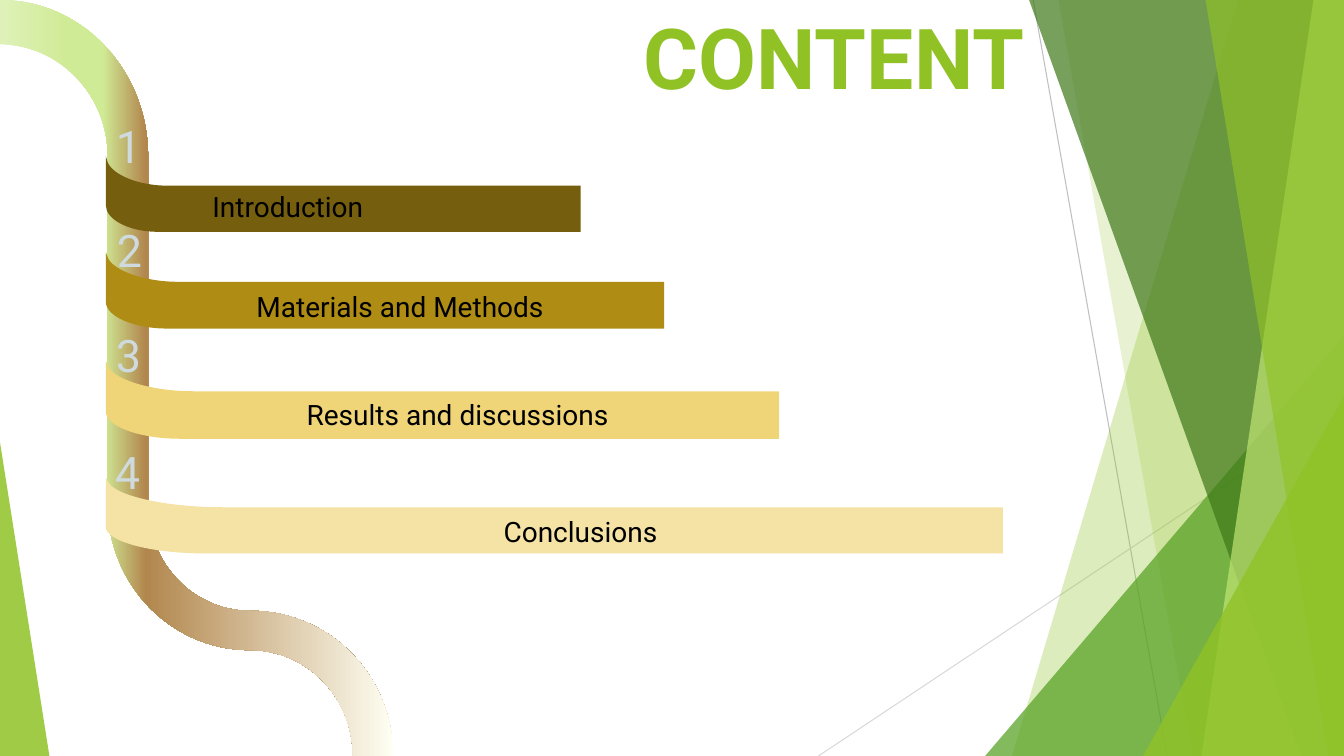
from lxml.etree import SubElement
from pptx import Presentation
from pptx.dml.color import RGBColor
from pptx.enum.shapes import MSO_CONNECTOR, MSO_SHAPE
from pptx.enum.text import PP_ALIGN
from pptx.oxml.ns import qn
from pptx.util import Pt

FONT = "Roboto"
GREEN = "90C226"
PIPE_STOPS = [(0, "DFF1B9"), (17, "D0EB96"), (26, "D0EB96"), (37, "B2874E"), (100, "FEFEF2")]
SECTIONS = [
    ("Introduction", "755E0D", (75.6, 111.6, 339.1, 54), (0, -30.2), (-5, 20.2, 270)),
    ("Materials and Methods", "AF8C14", (75.6, 180, 398.9, 54.7), (0.7, -24.5), (21.6, 23, 377.3)),
    ("Results and discussions", "F0D578", (75.6, 257.8, 481, 55.6), (0, -27.4), (21.6, 22.3, 459.4)),
    ("Conclusions", "F5E3A5", (75.6, 341.3, 640.8, 54), (-0.7, -27.4), (36.7, 22.3, 604.8)),
]


def color(value):
    return RGBColor.from_string(value)


def paint(sp, fill, alpha=100):
    sp.shadow.inherit = False
    sp.line.fill.background()
    sp.fill.solid()
    sp.fill.fore_color.rgb = color(fill)
    if alpha < 100:
        clr = sp.fill._xPr.find(".//" + qn("a:srgbClr"))
        SubElement(clr, qn("a:alpha"), val=str(alpha * 1000))


def paint_gradient(sp, stops):
    sp.shadow.inherit = False
    sp.line.fill.background()
    sp.fill.gradient()
    sp.fill.gradient_angle = 0
    gs_list = sp.fill._xPr.find(".//" + qn("a:gsLst"))
    for gs in list(gs_list):
        gs_list.remove(gs)
    for position, value in stops:
        gs = SubElement(gs_list, qn("a:gs"), pos=str(position * 1000))
        SubElement(gs, qn("a:srgbClr"), val=value)


def add_outline(slide, left, top, start, segments):
    def place(point):
        return Pt(left + point[0]), Pt(top + point[1])

    builder = slide.shapes.build_freeform(*place(start))
    builder.add_line_segments([place(pt) for seg in segments for pt in seg], close=True)
    sp = builder.convert_to_shape()
    lines = iter(list(sp._element.iter(qn("a:lnTo"))))
    for seg in segments:
        nodes = [next(lines) for _ in seg]
        if len(nodes) == 3:
            nodes[0].tag
            curve = SubElement(nodes[0].getparent(), qn("a:cubicBezTo"))
            nodes[0].addprevious(curve)
            for node in nodes:
                curve.append(node[0])
                node.getparent().remove(node)
    return sp


def add_text(slide, left, top, width, height, text, size, fill, bold=False, align=PP_ALIGN.LEFT):
    tf = slide.shapes.add_textbox(Pt(left), Pt(top), Pt(width), Pt(height)).text_frame
    tf.word_wrap = True
    p = tf.paragraphs[0]
    p.text = text
    p.alignment = align
    p.font.name = FONT
    p.font.size = Pt(size)
    p.font.bold = bold
    p.font.color.rgb = color(fill)


def add_hairline(slide, x1, y1, x2, y2, fill):
    line = slide.shapes.add_connector(MSO_CONNECTOR.STRAIGHT, Pt(x1), Pt(y1), Pt(x2), Pt(y2))
    line.line.color.rgb = color(fill)
    line.line.width = Pt(0.75)
    SubElement(line._element.spPr, qn("a:effectLst"))


def add_corner(slide, left, top, width, height, apex, fill, alpha):
    sp = slide.shapes.add_shape(MSO_SHAPE.ISOSCELES_TRIANGLE, Pt(left), Pt(top), Pt(width), Pt(height))
    sp.adjustments[0] = apex
    paint(sp, fill, alpha)


def draw_facets(slide, left, top, width, height):
    right, bottom = left + width, top + height

    def facet(upper, lower, fill, alpha):
        points = [(width, 0), (width, height), (lower, height)]
        paint(add_outline(slide, left, top, (upper, 0), [[pt] for pt in points]), fill, alpha)

    def corner(w, h, fill, alpha):
        add_corner(slide, right - w, bottom - h, w, h, 1, fill, alpha)

    add_hairline(slide, left + 35, top, left + 130.8, bottom, "BFBFBF")
    add_hairline(slide, right, top + 290.2, left - 118.4, bottom, "D9D9D9")
    facet(181.2, 19.9, GREEN, 30)
    facet(53, 148.8, GREEN, 20)
    corner(256.3, 300.2, "54A021", 72)
    facet(32.1, 226.5, "3F7819", 70)
    facet(235.2, 155.2, "C0E474", 70)
    facet(158.1, 246, GREEN, 65)
    corner(143.5, 257, GREEN, 80)


def draw_pipe(slide, left, top, width, height):
    inner, outer, middle = 77, 105.8, 178.6
    segments = [
        [(58.3, 0), (outer, 49.7), (outer, 111.6)],
        [(outer, 360.7)],
        [(outer, 402.5), (138.2, 436.3), (middle, 436.3)],
        [(235.4, 436.3), (width, 482.4), (width, height)],
        [(width - 28.8, height)],
        [(width - 28.8, 498.2), (219.6, 464.4), (middle, 464.4)],
        [(122.4, 464.4), (inner, 417.6), (inner, 360.7)],
        [(inner, 111.6)],
        [(inner, 67.7), (42.5, 31.7), (0, 31.7)],
    ]
    paint_gradient(add_outline(slide, left, top, (0, 0), segments), PIPE_STOPS)


def draw_section(slide, box, number, text, fill, number_offset, label_box):
    left, top, w, h = box
    segments = [
        [(w, h)],
        [(w, 0.39 * h)],
        [(0.13 * w, 0.39 * h)],
        [(0.07 * w, 0.39 * h), (0.015 * w, 0.25 * h), (0.004 * w, 0.08 * h)],
        [(0, 0)],
        [(0, 0.65 * h)],
        [(0, 0.84 * h), (0.05 * w, h), (0.11 * w, h)],
    ]
    paint(add_outline(slide, left, top, (0.11 * w, h), segments), fill)
    dx, dy = number_offset
    add_text(slide, left + dx, top + dy, 42.5, 46, str(number), 32, "CFDADF")
    dx, dy, label_width = label_box
    add_text(slide, left + dx, top + dy, label_width, 31.5, text, 20, "000000", align=PP_ALIGN.CENTER)


def main():
    prs = Presentation()
    prs.slide_width, prs.slide_height = Pt(960), Pt(540)
    slide = prs.slides.add_slide(prs.slide_layouts[6])
    draw_facets(slide, 703, 0, 257, 540)
    add_corner(slide, 0, 316, 35.3, 224, 0, GREEN, 85)
    add_text(slide, 452.9, 0.7, 343.4, 110, "CONTENT", 60, GREEN, bold=True)
    draw_pipe(slide, 0, 0, 280.8, 540)
    for number, (text, fill, box, number_offset, label_box) in enumerate(SECTIONS, 1):
        draw_section(slide, box, number, text, fill, number_offset, label_box)
    prs.save("out.pptx")


if __name__ == "__main__":
    main()
